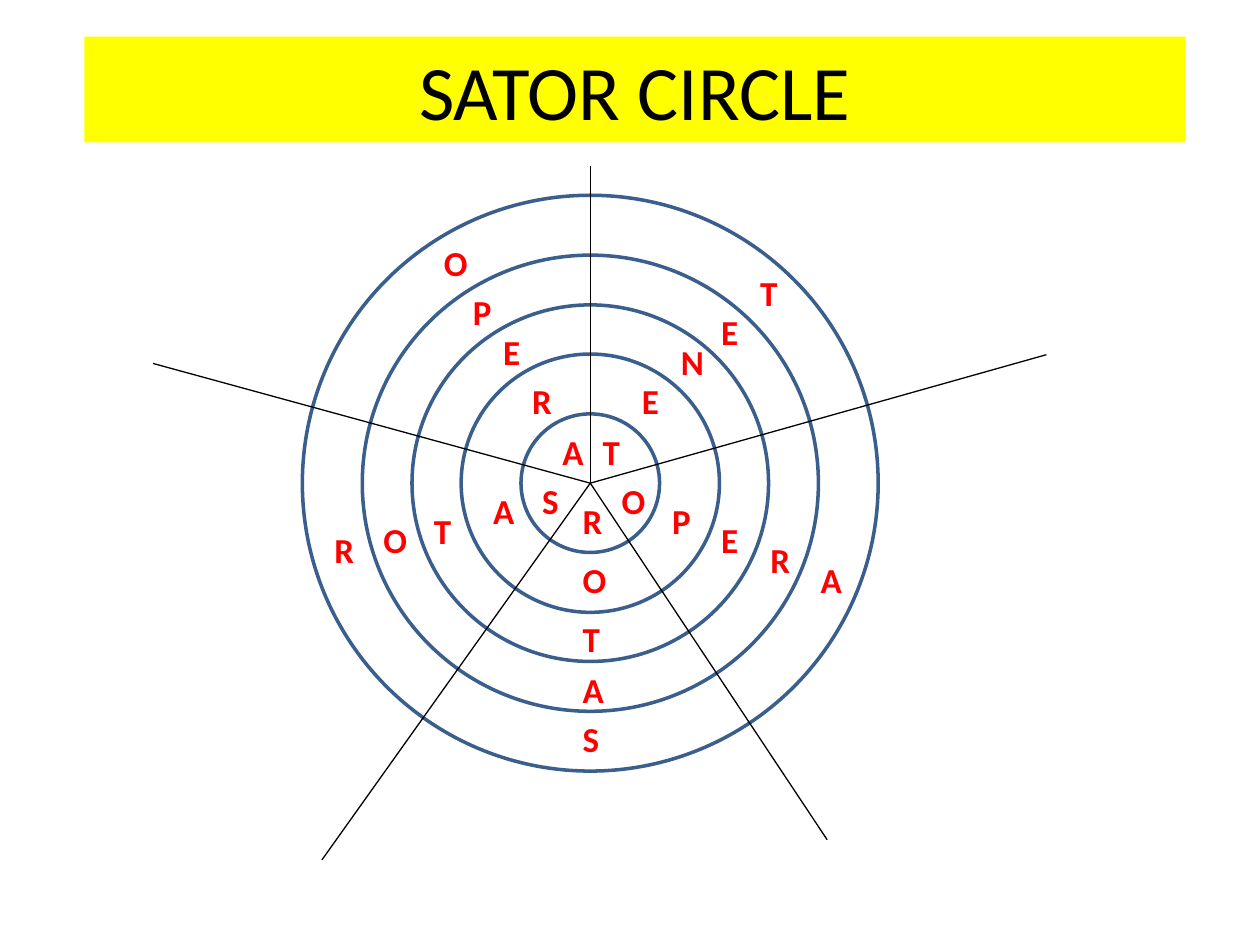
from lxml.etree import SubElement
from pptx import Presentation
from pptx.dml.color import RGBColor
from pptx.enum.shapes import MSO_CONNECTOR, MSO_SHAPE
from pptx.enum.text import MSO_ANCHOR, MSO_AUTO_SIZE, PP_ALIGN
from pptx.oxml.ns import qn
from pptx.util import Inches, Pt

RING_DIAMETERS = [1.1, 2.05, 2.83, 3.62, 4.57]
SPOKE_ENDS = [(3.62, -1.02), (1.88, 2.83), (-2.13, 2.99), (0, -2.52), (-3.47, -0.95)]
LETTER_SIZE = (0.31, 0.44)
WORDS = {
    "SATOR": [(-0.48, -0.08), (-0.87, 0), (-1.34, 0.16), (-1.74, 0.23), (-2.13, 0.31)],
    "AREPO": [(-0.32, -0.47), (-0.56, -0.87), (-0.79, -1.26), (-1.03, -1.58), (-1.26, -1.97)],
    "TENET": [(0, -0.47), (0.31, -0.87), (0.62, -1.18), (0.94, -1.42), (1.25, -1.73)],
    "OPERA": [(0.15, -0.08), (0.55, 0.08), (0.94, 0.23), (1.33, 0.39), (1.73, 0.55)],
    "ROTAS": [(-0.16, 0.08), (-0.16, 0.55), (-0.16, 1.02), (-0.16, 1.42), (-0.16, 1.81)],
}
SPELLING = {"SATOR": "SATOR", "AREPO": "AREPO", "TENET": "TENET", "OPERA": "OPERA", "ROTAS": "ROTAS"}
SPELLING["SATOR"] = "SATOR"


def color(hex_code):
    return RGBColor.from_string(hex_code)


def style_text(paragraph, size, hex_code, bold):
    paragraph.font.name = "Calibri"
    paragraph.font.size = Pt(size)
    paragraph.font.bold = bold
    paragraph.font.color.rgb = color(hex_code)


def place_title(slide, left, top, width, height):
    title = slide.shapes.title
    title.left, title.top = Inches(left), Inches(top)
    title.width, title.height = Inches(width), Inches(height)
    title.fill.solid()
    title.fill.fore_color.rgb = color("FFFF00")
    frame = title.text_frame
    frame.text = "SATOR CIRCLE"
    frame.auto_size = MSO_AUTO_SIZE.NONE
    frame.vertical_anchor = MSO_ANCHOR.MIDDLE
    heading = frame.paragraphs[0]
    heading.alignment = PP_ALIGN.CENTER
    style_text(heading, 44, "000000", False)


def add_ring(slide, center_x, center_y, diameter):
    ring = slide.shapes.add_shape(
        MSO_SHAPE.OVAL,
        Inches(center_x - diameter / 2), Inches(center_y - diameter / 2),
        Inches(diameter), Inches(diameter))
    ring.shadow.inherit = False
    ring.fill.background()
    ring.line.color.rgb = color("3A5F8C")
    ring.line.width = Pt(2)


def add_spoke(slide, center_x, center_y, dx, dy):
    spoke = slide.shapes.add_connector(
        MSO_CONNECTOR.STRAIGHT, Inches(center_x), Inches(center_y),
        Inches(center_x + dx), Inches(center_y + dy))
    spoke.line.color.rgb = color("000000")
    spoke.line.width = Pt(0.75)
    SubElement(spoke._element.spPr, qn("a:effectLst"))


def add_letter(slide, left, top, letter):
    width, height = LETTER_SIZE
    box = slide.shapes.add_textbox(Inches(left), Inches(top), Inches(width), Inches(height))
    frame = box.text_frame
    frame.word_wrap = True
    frame.text = letter
    style_text(frame.paragraphs[0], 20, "FF0000", True)


def place_circle(slide, left, top, size):
    center_x, center_y = left + size / 2, top + size / 2
    for diameter in RING_DIAMETERS:
        add_ring(slide, center_x, center_y, diameter)
    for dx, dy in SPOKE_ENDS:
        add_spoke(slide, center_x, center_y, dx, dy)
    for word, offsets in WORDS.items():
        for letter, (dx, dy) in zip(word, offsets):
            add_letter(slide, center_x + dx, center_y + dy, letter)


def main():
    deck = Presentation()
    deck.slide_width, deck.slide_height = Inches(10), Inches(7.5)
    slide = deck.slides.add_slide(deck.slide_layouts[5])
    place_title(slide, 0.67, 0.29, 8.74, 0.84)
    place_circle(slide, 2.4, 1.55, 4.57)
    deck.save("out.pptx")


if __name__ == "__main__":
    main()
